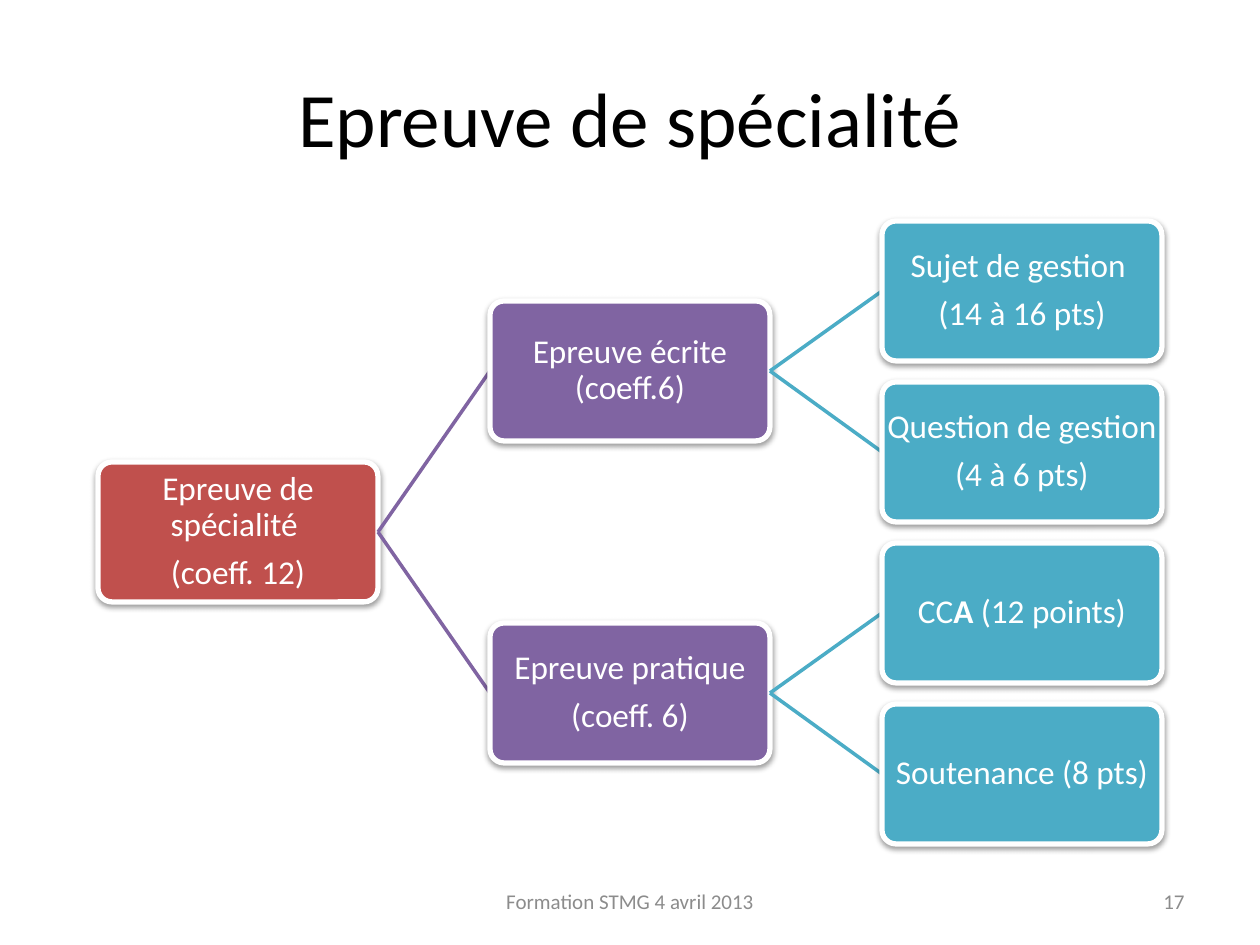
from lxml import etree
from pptx import Presentation
from pptx import util as u
from pptx.dml.color import RGBColor
from pptx.enum import shapes, text
from pptx.oxml import ns

PX = u.Inches(1) / 126
COLORS = {"root": "C0504D", "branch": "8064A2", "leaf": "4BACC6",
          "white": "FFFFFF", "black": "000000", "grey": "8C8C8C"}
LEVELS = ["root", "branch", "leaf"]

BOX_WIDTH, BOX_HEIGHT = 280, 140
LEFT, COLUMN_STEP = 98, 392
TOP, ROW_STEP = 221, 161

# Each node is (paragraphs, children); ** surrounds bold words.
EXAM = (["Epreuve de spécialité ", "(coeff. 12)"], [
    (["Epreuve écrite (coeff.6)"], [
        (["Sujet de gestion ", "(14 à 16 pts)"], []),
        (["Question de gestion ", "(4 à 6 pts)"], []),
    ]),
    (["Epreuve pratique", "(coeff. 6)"], [
        (["CC**A** (12 points)"], []),
        (["Soutenance (8 pts)"], []),
    ]),
])


def emu(*lengths):
    return [round(length * PX) for length in lengths]


def rgb(name):
    return RGBColor.from_string(COLORS[name])


def add_effects(shape, shadow=False):
    """Give the shape its own effect list, empty or with a soft shadow below."""
    effects = etree.SubElement(shape._element.spPr, ns.qn("a:effectLst"))
    if shadow:
        outer = etree.SubElement(effects, ns.qn("a:outerShdw"), blurRad="40000",
                                 dist="20000", dir="5400000", rotWithShape="0")
        color = etree.SubElement(outer, ns.qn("a:srgbClr"), val=COLORS["black"])
        etree.SubElement(color, ns.qn("a:alpha"), val="38000")


class SlideBuilder:
    """Holds the text style and the slide being filled."""

    font = "Calibri"

    def __init__(self, slide):
        self.slide = slide

    def fill_text(self, frame, paragraphs, size, color, align=text.PP_ALIGN.CENTER):
        frame.word_wrap = True
        frame.vertical_anchor = text.MSO_ANCHOR.MIDDLE
        for index, words in enumerate(paragraphs):
            paragraph = frame.add_paragraph() if index else frame.paragraphs[0]
            paragraph.alignment = align
            for part, piece in enumerate(words.split("**")):
                run = paragraph.add_run()
                run.text = piece
                run.font.name = self.font
                run.font.size = u.Pt(size)
                run.font.bold = part % 2 == 1
                run.font.color.rgb = rgb(color)

    def title(self, words, left, top, width, height):
        shape = self.slide.shapes.title
        shape.left, shape.top, shape.width, shape.height = emu(left, top, width, height)
        self.fill_text(shape.text_frame, [words], 44, "black")

    def footer(self, words, left, width, align):
        shape = self.slide.shapes.add_textbox(*emu(left, 876, width, 50))
        self.fill_text(shape.text_frame, [words], 12, "grey", align)

    def box(self, paragraphs, left, top, color):
        shape = self.slide.shapes.add_shape(
            shapes.MSO_SHAPE.ROUNDED_RECTANGLE, *emu(left, top, BOX_WIDTH, BOX_HEIGHT))
        shape.adjustments[0] = 0.1
        shape.fill.solid()
        shape.fill.fore_color.rgb = rgb(color)
        shape.line.color.rgb = rgb("white")
        shape.line.width = u.Pt(3)
        add_effects(shape, shadow=True)
        frame = shape.text_frame
        frame.margin_left = frame.margin_right = u.Inches(0.01)
        frame.margin_top = frame.margin_bottom = u.Inches(0.01)
        self.fill_text(frame, paragraphs, 19, "white")
        for paragraph in frame.paragraphs:
            paragraph.line_spacing = 0.9
            paragraph.space_after = u.Pt(6.65)
        return shape

    def link_from(self, parent, color):
        """Start a connector at the parent's right side; its end is joined later."""
        connector = self.slide.shapes.add_connector(
            shapes.MSO_CONNECTOR.STRAIGHT, 0, 0, 0, 0)
        connector.begin_connect(parent, 3)
        connector.line.color.rgb = rgb(color)
        connector.line.width = u.Pt(2)
        add_effects(connector)
        return connector

    def tree(self, node, first_row=0, level=0, parent=None):
        """Draw a node centred on its leaves, each link lying behind its child."""
        paragraphs, children = node
        color = LEVELS[level]
        connector = self.link_from(parent, color) if parent else None
        last_row = first_row + count_leaves(node) - 1
        top = TOP + (first_row + last_row) * ROW_STEP // 2
        shape = self.box(paragraphs, LEFT + level * COLUMN_STEP, top, color)
        if connector:
            connector.end_connect(shape, 1)
        for child in children:
            self.tree(child, first_row, level + 1, shape)
            first_row += count_leaves(child)


def count_leaves(node):
    return sum(map(count_leaves, node[1])) or 1


def main():
    presentation = Presentation()
    presentation.slide_width, presentation.slide_height = emu(1260, 945)
    slide = presentation.slides.add_slide(presentation.slide_layouts[5])
    builder = SlideBuilder(slide)
    builder.title("Epreuve de spécialité", 63, 38, 1134, 158)
    builder.tree(EXAM)
    builder.footer("17", 903, 294, text.PP_ALIGN.RIGHT)
    builder.footer("Formation STMG 4 avril 2013", 430, 400, text.PP_ALIGN.CENTER)
    presentation.save("out.pptx")


if __name__ == "__main__":
    main()
